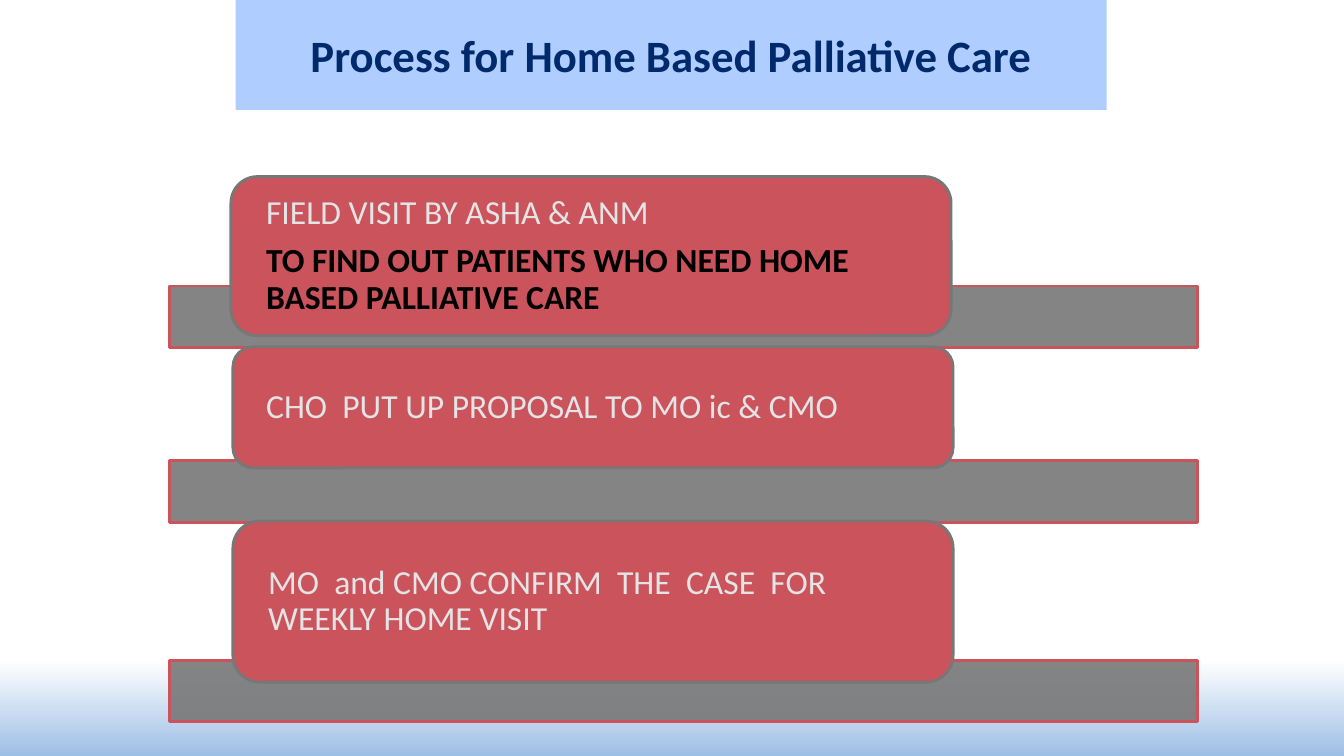
from lxml import etree
from pptx import Presentation
from pptx.dml.color import RGBColor
from pptx.enum.shapes import MSO_SHAPE as Shape
from pptx.enum.text import MSO_ANCHOR as Anchor, PP_ALIGN as Align
from pptx.oxml.ns import qn
from pptx.util import Cm, Pt

# Content
TITLE = "Process for Home Based Palliative Care"
# Each step: bar top, card (left, top, height), paragraphs (text, emphasised)
STEPS = [
    (7.21, (5.82, 4.45, 4.01), [
        ("FIELD VISIT BY ASHA & ANM", False),
        ("TO FIND OUT PATIENTS WHO NEED HOME BASED PALLIATIVE CARE", True),
    ]),
    (11.61, (5.87, 8.74, 3.05), [
        ("CHO  PUT UP PROPOSAL TO MO ic & CMO", False),
    ]),
    (16.64, (5.87, 13.13, 4.06), [
        ("MO  and CMO CONFIRM  THE  CASE  FOR WEEKLY HOME VISIT", False),
    ]),
]

# Style
WHITE = RGBColor(0xFF, 0xFF, 0xFF)
BLACK = RGBColor(0x00, 0x00, 0x00)
SKY = RGBColor(0x9D, 0xBF, 0xE5)
TITLE_FILL = RGBColor(0xAF, 0xCE, 0xFF)
NAVY = RGBColor(0x00, 0x2A, 0x6C)
RED = RGBColor(0xCA, 0x53, 0x5C)
GREY = RGBColor(0x77, 0x77, 0x77)
PALE = RGBColor(0xE4, 0xE4, 0xE4)
FONT = "Calibri"

# Layout, in centimetres
SLIDE_WIDTH, SLIDE_HEIGHT = 33.87, 19.05
GRADIENT_TOP = 6.99
BAR_LEFT, BAR_WIDTH, BAR_HEIGHT = 4.27, 25.91, 1.55
CARD_WIDTH, CARD_INSET = 18.15, 0.69


def add_box(slide, kind, left, top, width, height, fill=None, line=None):
    shape = slide.shapes.add_shape(kind, Cm(left), Cm(top), Cm(width), Cm(height))
    shape.shadow.inherit = False
    if fill is not None:
        shape.fill.solid()
        shape.fill.fore_color.rgb = fill
    if line is None:
        shape.line.fill.background()
    else:
        shape.line.color.rgb = line
        shape.line.width = Pt(2)
    return shape


def prepare_text(shape, side, edge):
    frame = shape.text_frame
    frame.word_wrap = True
    frame.vertical_anchor = Anchor.MIDDLE
    frame.margin_left = frame.margin_right = Cm(side)
    frame.margin_top = frame.margin_bottom = Cm(edge)
    return frame


def add_run(paragraph, text, size, color, bold):
    run = paragraph.add_run()
    run.text = text
    run.font.name = FONT
    run.font.size = Pt(size)
    run.font.bold = bold
    run.font.color.rgb = color


def add_backdrop(slide):
    backdrop = add_box(slide, Shape.RECTANGLE, 0, GRADIENT_TOP,
                       SLIDE_WIDTH, SLIDE_HEIGHT - GRADIENT_TOP)
    backdrop.fill.gradient()
    backdrop.fill.gradient_angle = 270
    for stop, position, color in zip(backdrop.fill.gradient_stops, (0.8, 1), (WHITE, SKY)):
        stop.position = position
        stop.color.rgb = color


def add_title(slide):
    box = add_box(slide, Shape.RECTANGLE, 5.94, 0, 21.95, 2.77, TITLE_FILL)
    paragraph = prepare_text(box, 0.18, 0.1).paragraphs[0]
    paragraph.alignment = Align.CENTER
    add_run(paragraph, TITLE, 32, NAVY, True)


def add_step(slide, bar_top, card_place, lines):
    # Translucent bar behind the card
    bar = add_box(slide, Shape.RECTANGLE, BAR_LEFT, bar_top, BAR_WIDTH, BAR_HEIGHT, GREY, RED)
    color = bar.fill._xPr.find(qn("a:solidFill"))[0]
    etree.SubElement(color, qn("a:alpha")).set("val", "90000")

    # Card with its text
    left, top, height = card_place
    card = add_box(slide, Shape.ROUNDED_RECTANGLE, left, top, CARD_WIDTH, height, RED, GREY)
    frame = prepare_text(card, CARD_INSET, 0)
    for index, (text, emphasised) in enumerate(lines):
        paragraph = frame.add_paragraph() if index else frame.paragraphs[0]
        paragraph.alignment = Align.LEFT
        paragraph.line_spacing = 0.9
        paragraph.space_after = Pt(8.4)
        add_run(paragraph, text, 24, BLACK if emphasised else PALE, emphasised)


def main():
    presentation = Presentation()
    presentation.slide_width = Cm(SLIDE_WIDTH)
    presentation.slide_height = Cm(SLIDE_HEIGHT)
    slide = presentation.slides.add_slide(presentation.slide_layouts[6])
    add_backdrop(slide)
    add_title(slide)
    for step in STEPS:
        add_step(slide, *step)
    presentation.save("out.pptx")


if __name__ == "__main__":
    main()
